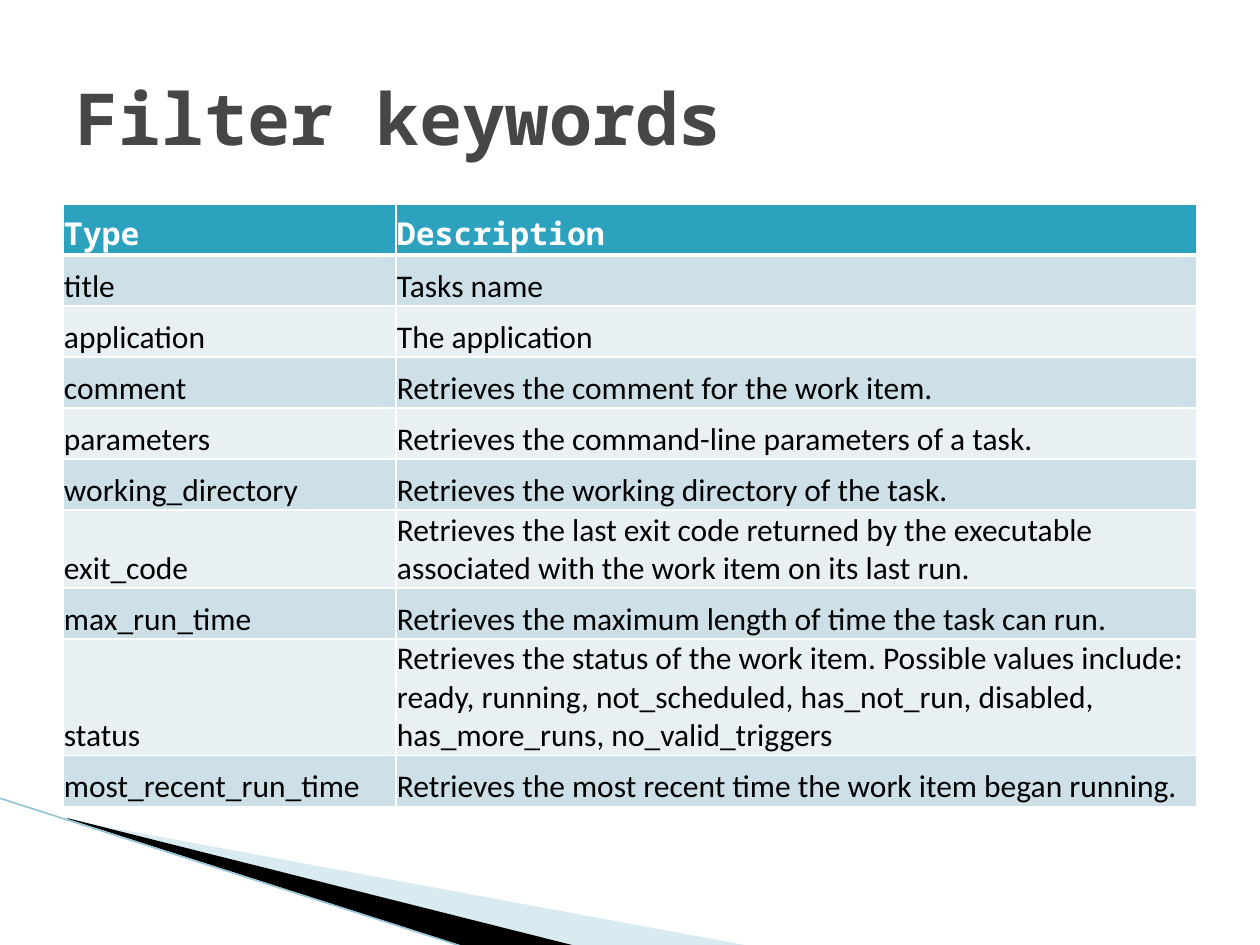
"""Build the "Filter keywords" slide: a title, a keyword table and corner stripes."""
from dataclasses import dataclass

from lxml import etree
from pptx import Presentation
from pptx.dml.color import RGBColor
from pptx.enum.text import MSO_ANCHOR, MSO_AUTO_SIZE, PP_ALIGN
from pptx.oxml.ns import qn
from pptx.util import Emu, Pt

BOTTOM, MIDDLE = MSO_ANCHOR.BOTTOM, MSO_ANCHOR.MIDDLE
LEFT = PP_ALIGN.LEFT
NO_AUTOFIT = MSO_AUTO_SIZE.NONE
TITLE_ONLY = 5
EMU_PER_PX = 914400 / 126
HEADING_FONT, BODY_FONT = "Noto Sans Mono", "Calibri"

COLORS = {
    "title": "464646",
    "header": "2DA2BF",
    "odd": "CDE0E8",
    "even": "E8F0F4",
    "white": "FFFFFF",
    "black": "000000",
    "stripe": "A0CBDC",
    "edge": "97C5D8",
}


@dataclass(frozen=True)
class Stripe:
    points: tuple[tuple[int, int], ...]
    color: str
    opacity: int = 100


@dataclass(frozen=True)
class Keyword:
    name: str
    description: str


STRIPES = (
    Stripe(((69, 820), (750, 946), (575, 946), (69, 819)), "stripe", 40),
    Stripe(((67, 818), (576, 946), (469, 948), (68, 819)), "black"),
)
EDGE = ((-1, 798), (467, 948))

HEADER = Keyword("Type", "Description")
KEYWORDS = (
    Keyword("title", "Tasks name"),
    Keyword("application", "The application"),
    Keyword("comment", "Retrieves the comment for the work item."),
    Keyword("parameters", "Retrieves the command-line parameters of a task."),
    Keyword("working_directory", "Retrieves the working directory of the task."),
    Keyword("exit_code", "Retrieves the last exit code returned by the executable "
            "associated with the work item on its last run."),
    Keyword("max_run_time", "Retrieves the maximum length of time the task can run."),
    Keyword("status", "Retrieves the status of the work item. Possible values include: "
            "ready, running, not_scheduled, has_not_run, disabled, "
            "has_more_runs, no_valid_triggers"),
    Keyword("most_recent_run_time",
            "Retrieves the most recent time the work item began running."),
)


def px(length: int) -> Emu:
    return Emu(round(length * EMU_PER_PX))


def rgb(color: str) -> RGBColor:
    return RGBColor.from_string(COLORS[color])


def write(frame, text: str, *, size: int, font: str, color: str, bold: bool = False) -> None:
    paragraph = frame.paragraphs[0]
    paragraph.alignment = LEFT
    run = paragraph.add_run()
    run.text = text
    run.font.size = Pt(size)
    run.font.name = font
    run.font.bold = bold
    run.font.color.rgb = rgb(color)


def draw_stripe(slide, stripe: Stripe) -> None:
    start, *rest = stripe.points
    builder = slide.shapes.build_freeform(*start, scale=EMU_PER_PX)
    builder.add_line_segments(rest, close=True)
    band = builder.convert_to_shape()
    band.shadow.inherit = False
    band.line.fill.background()
    band.fill.solid()
    band.fill.fore_color.rgb = rgb(stripe.color)
    if stripe.opacity < 100:
        tint = band.fill._xPr.find(qn("a:solidFill"))[0]
        etree.SubElement(tint, qn("a:alpha"), val=str(stripe.opacity * 1000))


def draw_edge(slide) -> None:
    (x1, y1), (x2, y2) = EDGE
    edge = slide.shapes.add_connector(1, px(x1), px(y1), px(x2), px(y2))
    edge.line.width = Pt(0.95)
    edge.line.color.rgb = rgb("edge")
    etree.SubElement(edge._element.spPr, qn("a:effectLst"))


def set_borders(cell, top: int, bottom: int) -> None:
    properties = cell._tc.get_or_add_tcPr()
    for side, width in (("L", 1), ("R", 1), ("T", top), ("B", bottom)):
        border = etree.SubElement(properties, qn(f"a:ln{side}"), w=str(Pt(width)))
        fill = etree.SubElement(border, qn("a:solidFill"))
        etree.SubElement(fill, qn("a:srgbClr"), val=COLORS["white"])


def draw_table(slide) -> None:
    rows = (HEADER, *KEYWORDS)
    table = slide.shapes.add_table(
        len(rows), 2, px(63), px(204), px(1134), px(51 * len(rows))).table
    for column, width in zip(table.columns, (333, 801)):
        column.width = px(width)
    for index, keyword in enumerate(rows):
        is_header = index == 0
        band = "header" if is_header else "odd" if index % 2 else "even"
        for column, text in enumerate((keyword.name, keyword.description)):
            cell = table.cell(index, column)
            set_borders(cell, top=3 if index == 1 else 1, bottom=3 if is_header else 1)
            cell.fill.solid()
            cell.fill.fore_color.rgb = rgb(band)
            cell.vertical_anchor = BOTTOM
            cell.margin_left = cell.margin_right = cell.margin_top = px(1)
            cell.margin_bottom = 0
            write(cell.text_frame, text, size=18, bold=is_header,
                  font=HEADING_FONT if is_header else BODY_FONT,
                  color="white" if is_header else "black")


def place_title(slide) -> None:
    title = slide.shapes.title
    title.left, title.top, title.width, title.height = px(63), px(38), px(1134), px(158)
    frame = title.text_frame
    frame.auto_size = NO_AUTOFIT
    frame.vertical_anchor = MIDDLE
    write(frame, "Filter keywords", size=41, font=HEADING_FONT, color="title", bold=True)


def main() -> None:
    deck = Presentation()
    deck.slide_width, deck.slide_height = px(1260), px(945)
    slide = deck.slides.add_slide(deck.slide_layouts[TITLE_ONLY])
    place_title(slide)
    for stripe in STRIPES:
        draw_stripe(slide, stripe)
    draw_edge(slide)
    draw_table(slide)
    deck.save("out.pptx")


if __name__ == "__main__":
    main()
